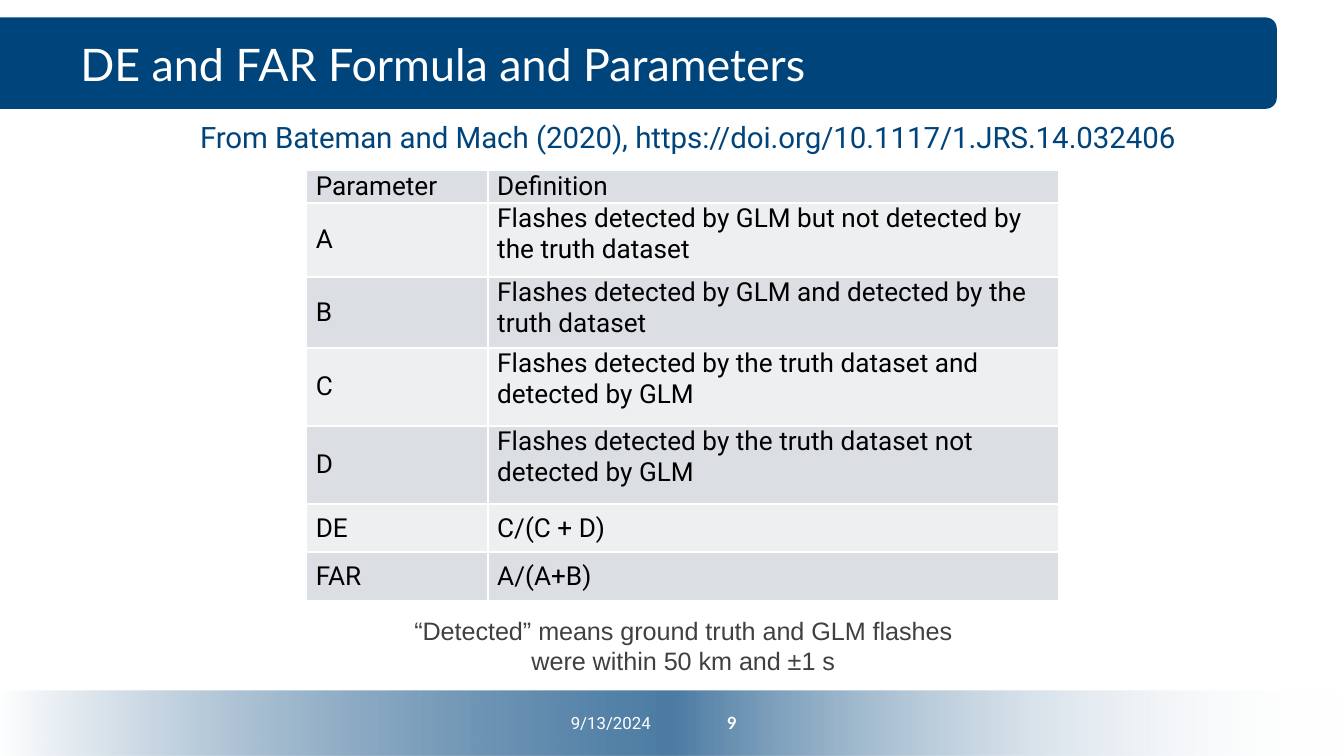
from lxml import etree
from pptx import Presentation
from pptx.dml.color import RGBColor
from pptx.enum.shapes import MSO_SHAPE
from pptx.enum.text import MSO_ANCHOR, PP_ALIGN
from pptx.oxml import parse_xml
from pptx.oxml.ns import nsdecls
from pptx.util import Inches, Pt

NAVY = RGBColor(0x00, 0x44, 0x7C)
WHITE = RGBColor(0xFF, 0xFF, 0xFF)
BLACK = RGBColor(0x00, 0x00, 0x00)
CHARCOAL = RGBColor(0x40, 0x40, 0x41)
DARK_BAND = RGBColor(0xDB, 0xDF, 0xE3)
LIGHT_BAND = RGBColor(0xEE, 0xEF, 0xF1)


def style(paragraph, size, font, color):
    paragraph.font.size = Pt(size)
    paragraph.font.name = font
    paragraph.font.color.rgb = color


def add_text(text, left, top, width, height, size, font, color,
             align=PP_ALIGN.LEFT, anchor=MSO_ANCHOR.MIDDLE):
    box = slide.shapes.add_textbox(Inches(left), Inches(top), Inches(width), Inches(height))
    frame = box.text_frame
    frame.word_wrap = True
    frame.vertical_anchor = anchor
    paragraph = frame.paragraphs[0]
    paragraph.text = text
    paragraph.alignment = align
    style(paragraph, size, font, color)
    return paragraph


prs = Presentation()
prs.slide_width, prs.slide_height = Inches(10), Inches(10 * 9 / 16)
slide = prs.slides.add_slide(prs.slide_layouts[6])

# Title banner, turned so that its rounded corners face right
banner = slide.shapes.add_shape(MSO_SHAPE.ROUND_2_SAME_RECTANGLE,
                                Inches(4.41), Inches(-4.28), Inches(0.68), Inches(9.5))
banner.rotation = 90
banner.adjustments[0] = 0.12
banner.shadow.inherit = False
banner.fill.solid()
banner.fill.fore_color.rgb = NAVY
banner.line.fill.background()

# Footer band fading out on both sides
footer = slide.shapes.add_shape(MSO_SHAPE.RECTANGLE,
                                Inches(0), Inches(5.14), Inches(10), Inches(0.48))
footer.shadow.inherit = False
footer.line.fill.background()
footer.fill.gradient()
footer.fill.gradient_angle = 0
stops = footer.fill._fill._gradFill.gsLst
for stop in list(stops):
    stops.remove(stop)
for position, color, opacity in [(0, WHITE, 100), (50, NAVY, 70), (100, WHITE, 0)]:
    stops.append(parse_xml(
        f'<a:gs {nsdecls("a")} pos="{position * 1000}"><a:srgbClr val="{color}">'
        f'<a:alpha val="{opacity * 1000}"/></a:srgbClr></a:gs>'))

add_text("DE and FAR Formula and Parameters", 0.5, 0.13, 9, 0.68, 24, "Lato", WHITE)
add_text("From Bateman and Mach (2020), https://doi.org/10.1117/1.JRS.14.032406",
         1.39, 0.84, 7.96, 0.42, 15.75, "Roboto", NAVY, anchor=MSO_ANCHOR.TOP)
add_text("9/13/2024", 3.94, 5.23, 1, 0.3, 9, "Roboto", WHITE, PP_ALIGN.RIGHT)
page_number = add_text("9", 5, 5.23, 0.58, 0.3, 9, "Lato", WHITE, PP_ALIGN.RIGHT)
page_number.font.bold = True
add_text("“Detected” means ground truth and GLM flashes were within 50 km and ±1 s",
         2.95, 4.53, 4.27, 0.56, 13.5, "Arial", CHARCOAL, PP_ALIGN.CENTER, MSO_ANCHOR.TOP)

# Parameter, definition, row height, anchor of the definition
definitions = [
    ("Parameter", "Definition", 0.24, MSO_ANCHOR.TOP),
    ("A", "Flashes detected by GLM but not detected by the truth dataset", 0.55, MSO_ANCHOR.TOP),
    ("B", "Flashes detected by GLM and detected by the truth dataset", 0.53, MSO_ANCHOR.TOP),
    ("C", "Flashes detected by the truth dataset and detected by GLM", 0.58, MSO_ANCHOR.TOP),
    ("D", "Flashes detected by the truth dataset not detected by GLM", 0.58, MSO_ANCHOR.TOP),
    ("DE", "C/(C + D)", 0.36, MSO_ANCHOR.MIDDLE),
    ("FAR", "A/(A+B)", 0.36, MSO_ANCHOR.MIDDLE),
]
table = slide.shapes.add_table(len(definitions), 2, Inches(2.28), Inches(1.27),
                               Inches(5.61), Inches(3.21)).table
table.columns[0].width = Inches(1.35)
table.columns[1].width = Inches(4.25)

for row, (parameter, definition, height, anchor) in enumerate(definitions):
    table.rows[row].height = Inches(height)
    parameter_anchor = MSO_ANCHOR.MIDDLE if row else MSO_ANCHOR.TOP
    for column, (text, cell_anchor) in enumerate([(parameter, parameter_anchor),
                                                  (definition, anchor)]):
        cell = table.cell(row, column)
        cell.text = text
        cell.vertical_anchor = cell_anchor
        cell.margin_left = cell.margin_right = Inches(0.07)
        cell.margin_top = cell.margin_bottom = 0
        style(cell.text_frame.paragraphs[0], 14, "Roboto", BLACK)
        cell.text_frame.paragraphs[0].font.bold = False
        cell.fill.solid()
        cell.fill.fore_color.rgb = LIGHT_BAND if row % 2 else DARK_BAND
        properties = cell._tc.get_or_add_tcPr()
        for index, side in enumerate(["lnL", "lnR", "lnT", "lnB"]):
            properties.insert(index, etree.fromstring(
                f'<a:{side} {nsdecls("a")} w="{Pt(1)}"><a:solidFill>'
                f'<a:srgbClr val="{WHITE}"/></a:solidFill></a:{side}>'))

prs.save("out.pptx")
